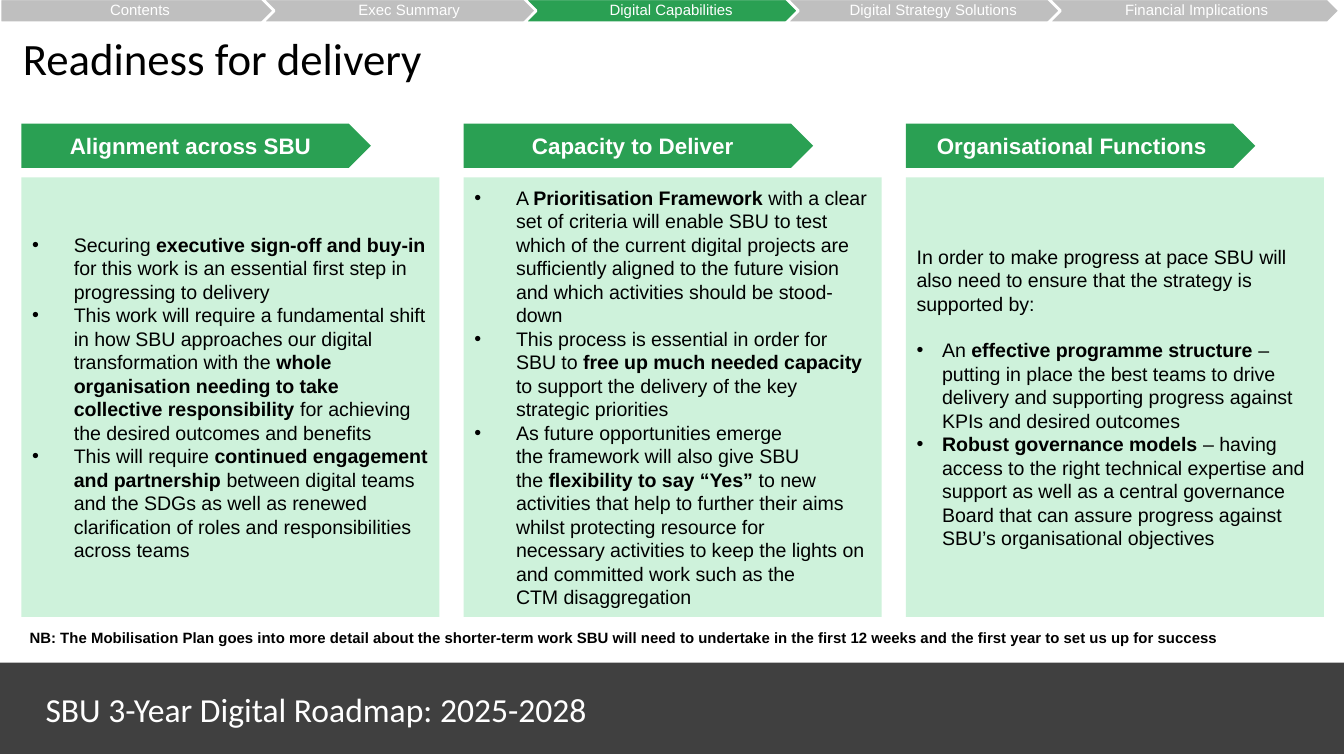
from pptx import Presentation
from pptx.dml.color import RGBColor
from pptx.enum.shapes import MSO_SHAPE
from pptx.enum.text import MSO_ANCHOR, MSO_AUTO_SIZE, PP_ALIGN
from pptx.oxml.ns import qn
from pptx.util import Inches, Pt
from lxml.etree import SubElement

# Content: ** switches bold on and off, ~ is a no-break space
TITLE = "Readiness for delivery"
FOOTER = "SBU 3-Year Digital Roadmap: 2025-2028"
NOTE = ("NB: The Mobilisation Plan goes into more detail about the shorter-term work SBU will need "
        "to undertake in the first 12 weeks and the first year to set us up for success")
CURRENT_STEP = "Digital Capabilities"
# Step name, width, left inset
STEPS = [
    ("Contents", 2.13, 0.2),
    ("Exec Summary", 2.35, 0.04),
    (CURRENT_STEP, 2.35, 0.04),
    ("Digital Strategy Solutions", 2.35, 0.04),
    ("Financial Implications", 2.17, 0.24),
]
COLUMNS = [
    {"heading": "Alignment across SBU", "intro": None, "indent": 0.31, "bullets": [
        "Securing **executive sign-off and buy-in **for this work is an essential first step in "
        "progressing to delivery",
        "This work will require a fundamental shift in how SBU approaches our digital transformation "
        "with the **whole organisation needing to take collective responsibility **for achieving "
        "the desired outcomes and benefits",
        "This will require **continued engagement and partnership** between digital teams and the "
        "SDGs as well as renewed clarification of roles and responsibilities across teams",
    ]},
    {"heading": "Capacity to Deliver", "intro": None, "indent": 0.31, "bullets": [
        "A **Prioritisation Framework **with a clear set of criteria will enable SBU to test which "
        "of the current digital projects are sufficiently aligned to the future vision and which "
        "activities should be stood-down",
        "This process is essential in order for SBU to **free up much needed capacity **to support "
        "the delivery of the key strategic priorities~",
        "As future opportunities emerge the~framework will also give SBU the~**flexibility to say "
        "“Yes”~**to new activities~that help to further their aims whilst~protecting resource for "
        "necessary~activities to keep the lights on and~committed work such as the "
        "CTM~disaggregation~",
    ]},
    {"heading": "Organisational Functions ", "indent": 0.19,
     "intro": "In order to make progress at pace SBU will also need to ensure that the strategy is "
              "supported by: ",
     "bullets": [
        "An **effective programme structure **– putting in place the best teams to drive delivery "
        "and supporting progress against KPIs and desired outcomes",
        "**Robust governance models **– having access to the right technical expertise and support "
        "as well as a central governance Board that can assure progress against SBU’s "
        "organisational objectives",
     ]},
]

THEME = {
    "green": RGBColor(0x2A, 0xA0, 0x53), "mint": RGBColor(0xCE, 0xF2, 0xDB),
    "grey": RGBColor(0xBF, 0xBF, 0xBF), "black": RGBColor(0, 0, 0),
    "white": RGBColor(0xFF, 0xFF, 0xFF),
    "head_font": "Calibri", "body_font": "Arial",
    "title": 24, "footer": 18, "heading": 12, "body": 10.5, "small": 8,
}
NO_BREAK_SPACE = chr(160)
SLIDE_WIDTH = 10
LEFT, COLUMN_STEP, COLUMN_WIDTH = 0.16, 3.29, 3.11
STEP_PITCH = 1.95


def add_block(slide, kind, box, fill, outline=None):
    block = slide.shapes.add_shape(kind, *map(Inches, box))
    block.shadow.inherit = False
    block.fill.solid()
    block.fill.fore_color.rgb = THEME[fill]
    if outline:
        block.line.color.rgb = THEME[outline]
        block.line.width = Pt(1.5)
    else:
        block.line.fill.background()
    return block


def set_frame(frame, insets):
    frame.word_wrap = True
    frame.auto_size = MSO_AUTO_SIZE.NONE
    frame.vertical_anchor = MSO_ANCHOR.MIDDLE
    (frame.margin_left, frame.margin_top,
     frame.margin_right, frame.margin_bottom) = map(Inches, insets)


def write(paragraph, text, size, color="black", font="body_font", bold=False, align=PP_ALIGN.LEFT):
    paragraph.alignment = align
    for index, part in enumerate(text.replace("~", NO_BREAK_SPACE).split("**")):
        if part:
            run = paragraph.add_run()
            run.text = part
            run.font.name = THEME[font]
            run.font.size = Pt(THEME[size])
            run.font.color.rgb = THEME[color]
            run.font.bold = bold or index % 2 == 1


def add_bullet(paragraph, indent):
    properties = paragraph._p.get_or_add_pPr()
    properties.set("marL", str(Inches(indent)))
    properties.set("indent", str(-Inches(indent)))
    SubElement(properties, qn("a:buFont"), typeface="Arial")
    SubElement(properties, qn("a:buChar"), char="•")


def add_label(slide, box, insets, text, size, **style):
    label = slide.shapes.add_textbox(*map(Inches, box))
    set_frame(label.text_frame, insets)
    write(label.text_frame.paragraphs[0], text, size, **style)


def add_column(slide, left, column):
    panel = add_block(slide, MSO_SHAPE.RECTANGLE, (left, 1.32, COLUMN_WIDTH, 3.27), "mint")
    frame = panel.text_frame
    set_frame(frame, (0.08, 0.04, 0.08, 0.04))
    paragraph = frame.paragraphs[0]
    if column["intro"]:
        write(paragraph, column["intro"], "body")
        paragraph.space_after = Pt(12.5)
        paragraph = frame.add_paragraph()
    for index, bullet in enumerate(column["bullets"]):
        if index:
            paragraph = frame.add_paragraph()
        add_bullet(paragraph, column["indent"])
        write(paragraph, bullet, "body")

    heading = add_block(slide, MSO_SHAPE.PENTAGON, (left, 0.92, 2.6, 0.33), "green")
    set_frame(heading.text_frame, (0, 0, 0, 0))
    write(heading.text_frame.paragraphs[0], column["heading"], "heading", "white",
          bold=True, align=PP_ALIGN.CENTER)


def main():
    deck = Presentation()
    deck.slide_width, deck.slide_height = Inches(SLIDE_WIDTH), Inches(SLIDE_WIDTH * 9 / 16)
    slide = deck.slides.add_slide(deck.slide_layouts[5])

    # Footer band, three-quarters opaque
    band = add_block(slide, MSO_SHAPE.RECTANGLE, (0, 4.93, SLIDE_WIDTH, 0.68), "black")
    band_color = band._element.spPr.find(qn("a:solidFill")).find(qn("a:srgbClr"))
    SubElement(band_color, qn("a:alpha"), val="75000")
    add_label(slide, (0.24, 5.13, 4.41, 0.3), (0.1, 0.05, 0.1, 0.05), FOOTER, "footer",
              color="white", font="head_font")

    # Title
    title = slide.shapes.title
    title.left, title.top, title.width, title.height = map(Inches, (0.1, -0.01, 9.18, 0.88))
    set_frame(title.text_frame, (0.07, 0.04, 0.07, 0.04))
    write(title.text_frame.paragraphs[0], TITLE, "title", font="head_font")

    # Columns and note
    for index, column in enumerate(COLUMNS):
        add_column(slide, LEFT + index * COLUMN_STEP, column)
    add_label(slide, (LEFT, 4.62, 9.69, 0.25), (0.06,) * 4, NOTE, "small", bold=True)

    # Progress bar
    for index, (name, width, inset) in enumerate(STEPS):
        step = add_block(slide, MSO_SHAPE.CHEVRON if index else MSO_SHAPE.PENTAGON,
                         (index * STEP_PITCH, -0.01, width, 0.18),
                         "green" if name == CURRENT_STEP else "grey", "white")
        set_frame(step.text_frame, (inset, 0.02, 0.2, 0.02))
        paragraph = step.text_frame.paragraphs[0]
        write(paragraph, name, "small", "white", align=PP_ALIGN.CENTER)
        paragraph.line_spacing = 0.9

    deck.save("out.pptx")


if __name__ == "__main__":
    main()
